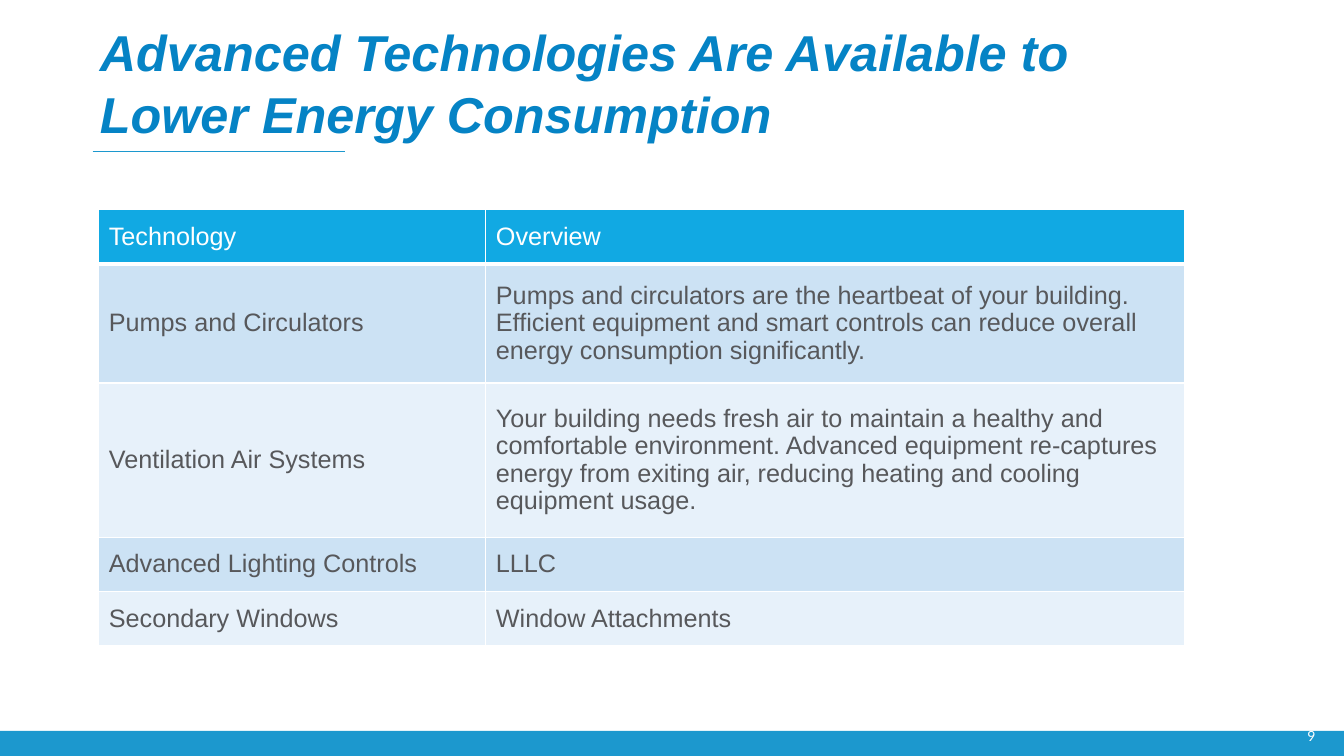
import dataclasses
import typing

import lxml.etree
import pptx
import pptx.dml.color
import pptx.enum.shapes
import pptx.enum.text
import pptx.oxml.ns
import pptx.util

RGBColor = pptx.dml.color.RGBColor
WHITE = RGBColor(0xFF, 0xFF, 0xFF)
FOOTER_BLUE = RGBColor(0x1C, 0x98, 0xCE)
TITLE_BLUE = RGBColor(0x05, 0x83, 0xC5)
HEADER_BLUE = RGBColor(0x11, 0xA9, 0xE3)
BAND_DARK = RGBColor(0xCC, 0xE2, 0xF4)
BAND_LIGHT = RGBColor(0xE7, 0xF1, 0xFA)
BODY_GRAY = RGBColor(0x57, 0x58, 0x5B)

GRID_COLUMNS, GRID_ROWS = 160, 90
SLIDE_WIDTH, SLIDE_HEIGHT = pptx.util.Inches(13.33), pptx.util.Inches(7.5)
TECHNOLOGY_COLUMNS = (46.08, 83.16)

TITLE_FONT = {"name": "Arial", "size": pptx.util.Pt(36), "bold": True, "italic": True}
TABLE_FONT = {"name": "Arial", "size": pptx.util.Pt(18), "bold": False}
NUMBER_FONT = {"name": "Lato", "size": pptx.util.Pt(10)}
TITLE_FRAME = {
    "margin_left": pptx.util.Inches(0.01), "margin_top": pptx.util.Inches(0.01),
    "margin_right": 0, "margin_bottom": 0, "word_wrap": True,
    "auto_size": pptx.enum.text.MSO_AUTO_SIZE.NONE,
    "vertical_anchor": pptx.enum.text.MSO_ANCHOR.MIDDLE,
}
NUMBER_FRAME = {
    "margin_left": 0, "margin_top": 0, "margin_right": 0, "margin_bottom": 0,
    "word_wrap": True,
    "auto_size": pptx.enum.text.MSO_AUTO_SIZE.SHAPE_TO_FIT_TEXT,
}
TITLE_PARAGRAPH = {"alignment": pptx.enum.text.PP_ALIGN.LEFT, "line_spacing": 1.04}
TABLE_PARAGRAPH = {"alignment": pptx.enum.text.PP_ALIGN.LEFT, "line_spacing": 0.97}


@dataclasses.dataclass(frozen=True)
class Area:
    column: float
    row: float
    columns: float
    rows: float

    def box(self) -> tuple[int, int, int, int]:
        return (across(self.column), down(self.row), across(self.columns), down(self.rows))


@dataclasses.dataclass(frozen=True)
class TechnologyRow:
    rows: float
    technology: str
    overview: str


TECHNOLOGIES = (
    TechnologyRow(6.48, "Technology", "Overview"),
    TechnologyRow(
        14.16, "Pumps and Circulators",
        "Pumps and circulators are the heartbeat of your building. Efficient equipment "
        "and smart controls can reduce overall energy consumption significantly."),
    TechnologyRow(
        18.36, "Ventilation Air Systems",
        "Your building needs fresh air to maintain a healthy and comfortable environment. "
        "Advanced equipment re-captures energy from exiting air, reducing heating and "
        "cooling equipment usage."),
    TechnologyRow(6.48, "Advanced Lighting Controls", "LLLC"),
    TechnologyRow(6.48, "Secondary Windows", "Window Attachments"),
)


def across(columns: float) -> int:
    return round(SLIDE_WIDTH * columns / GRID_COLUMNS)


def down(rows: float) -> int:
    return round(SLIDE_HEIGHT * rows / GRID_ROWS)


def apply(target: typing.Any, values: dict[str, typing.Any]) -> None:
    for attribute, value in values.items():
        setattr(target, attribute, value)


def write(frame: typing.Any, text: str, font: dict[str, typing.Any], color: RGBColor,
          paragraph_format: dict[str, typing.Any]) -> None:
    frame.text = text
    paragraph = frame.paragraphs[0]
    apply(paragraph, paragraph_format)
    run_font = paragraph.runs[0].font
    apply(run_font, font)
    run_font.color.rgb = color


def place(shape: typing.Any, area: Area) -> None:
    apply(shape, dict(zip(("left", "top", "width", "height"), area.box())))


def draw_title(slide: typing.Any, text: str, area: Area) -> None:
    title = slide.shapes.title
    place(title, area)
    apply(title.text_frame, TITLE_FRAME)
    write(title.text_frame, text, TITLE_FONT, TITLE_BLUE, TITLE_PARAGRAPH)


def draw_footer(slide: typing.Any, area: Area) -> None:
    footer = slide.shapes.add_shape(pptx.enum.shapes.MSO_SHAPE.RECTANGLE, *area.box())
    footer.shadow.inherit = False
    footer.fill.solid()
    footer.fill.fore_color.rgb = FOOTER_BLUE
    footer.line.fill.background()


def draw_title_rule(slide: typing.Any, start: float, end: float, row: float) -> None:
    rule = slide.shapes.add_connector(
        pptx.enum.shapes.MSO_CONNECTOR.STRAIGHT,
        across(start), down(row), across(end), down(row))
    rule.line.color.rgb = FOOTER_BLUE
    rule.line.width = pptx.util.Pt(0.75)
    lxml.etree.SubElement(rule._element.spPr, pptx.oxml.ns.qn("a:effectLst"))


def draw_borders(cell: typing.Any, bottom_width: float) -> None:
    properties = cell._tc.get_or_add_tcPr()
    widths = {"lnL": 1, "lnR": 1, "lnT": 1, "lnB": bottom_width}
    for position, (side, width) in enumerate(widths.items()):
        border = lxml.etree.Element(
            pptx.oxml.ns.qn(f"a:{side}"), w=str(pptx.util.Pt(width)))
        fill = lxml.etree.SubElement(border, pptx.oxml.ns.qn("a:solidFill"))
        lxml.etree.SubElement(fill, pptx.oxml.ns.qn("a:srgbClr"), val=str(WHITE))
        properties.insert(position, border)


def draw_technologies(slide: typing.Any, column: float, row: float) -> None:
    area = Area(column, row, sum(TECHNOLOGY_COLUMNS),
                sum(technology.rows for technology in TECHNOLOGIES))
    table = slide.shapes.add_table(
        len(TECHNOLOGIES), len(TECHNOLOGY_COLUMNS), *area.box()).table
    for table_column, columns in zip(table.columns, TECHNOLOGY_COLUMNS):
        table_column.width = across(columns)
    for index, technology in enumerate(TECHNOLOGIES):
        table.rows[index].height = down(technology.rows)
        is_header = index == 0
        band = HEADER_BLUE if is_header else (BAND_LIGHT, BAND_DARK)[index % 2]
        texts = (technology.technology, technology.overview)
        for cell, text in zip(table.rows[index].cells, texts):
            cell.vertical_anchor = pptx.enum.text.MSO_ANCHOR.MIDDLE
            cell.fill.solid()
            cell.fill.fore_color.rgb = band
            write(cell.text_frame, text, TABLE_FONT,
                  WHITE if is_header else BODY_GRAY, TABLE_PARAGRAPH)
            draw_borders(cell, 3 if is_header else 1)


def draw_page_number(slide: typing.Any, number: str, area: Area) -> None:
    page_number = slide.shapes.add_textbox(*area.box())
    apply(page_number.text_frame, NUMBER_FRAME)
    write(page_number.text_frame, number, NUMBER_FONT, WHITE, {})


def main() -> None:
    presentation = pptx.Presentation()
    apply(presentation, {"slide_width": SLIDE_WIDTH, "slide_height": SLIDE_HEIGHT})
    slide = presentation.slides.add_slide(presentation.slide_layouts.get_by_name("Title Only"))
    draw_footer(slide, Area(0, 87, GRID_COLUMNS, 3))
    draw_title_rule(slide, 11.04, 41.04, 18)
    draw_title(slide, "Advanced Technologies Are Available to Lower Energy Consumption",
               Area(11.76, 5.52, 124.56, 8.16))
    draw_technologies(slide, 11.76, 24.96)
    draw_page_number(slide, "9", Area(155.64, 86.64, 4.32, 2.04))
    presentation.save("out.pptx")


if __name__ == "__main__":
    main()
